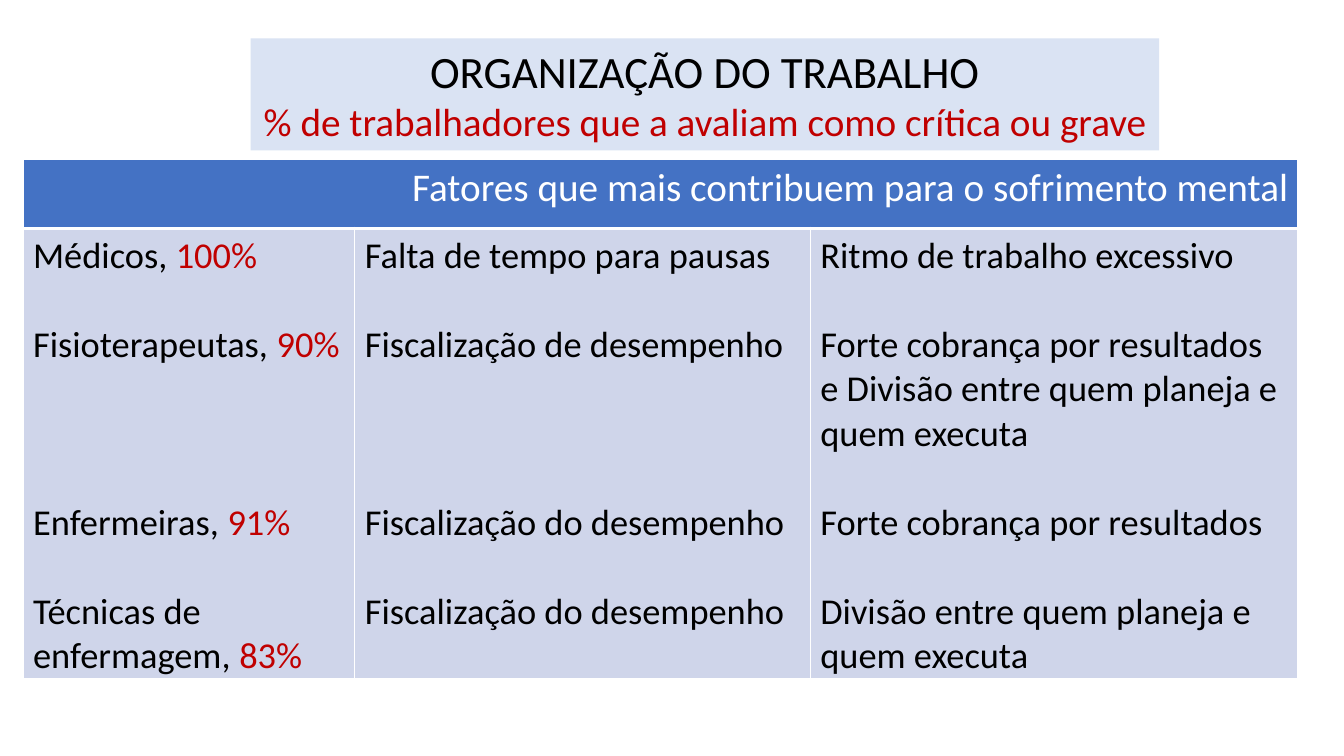
from dataclasses import dataclass

from lxml.etree import SubElement
from pptx import Presentation
from pptx.dml.color import RGBColor
from pptx.enum.shapes import MSO_SHAPE
from pptx.enum.text import PP_ALIGN
from pptx.oxml.ns import qn
from pptx.util import Cm, Pt


@dataclass(frozen=True)
class Theme:
    font: str = "Calibri"
    title_size: int = 32
    subtitle_size: int = 28
    body_size: int = 26
    line_height: float = 31.74  # one line of body text, in points
    black: RGBColor = RGBColor(0x00, 0x00, 0x00)
    white: RGBColor = RGBColor(0xFF, 0xFF, 0xFF)
    red: RGBColor = RGBColor(0xC0, 0x00, 0x00)
    title_fill: RGBColor = RGBColor(0xDA, 0xE3, 0xF3)
    header_fill: RGBColor = RGBColor(0x44, 0x72, 0xC4)
    body_fill: RGBColor = RGBColor(0xCF, 0xD5, 0xEA)


# Each entry: text, percentage in red, blank lines above
COLUMNS = [
    [("Médicos, ", "100%", 0), ("Fisioterapeutas, ", "90%", 1),
     ("Enfermeiras, ", "91%", 3), ("Técnicas de enfermagem, ", "83%", 1)],
    [("Falta de tempo para pausas", "", 0), ("Fiscalização de desempenho", "", 1),
     ("Fiscalização do desempenho", "", 3), ("Fiscalização do desempenho", "", 1)],
    [("Ritmo de trabalho excessivo", "", 0),
     ("Forte cobrança por resultados e Divisão entre quem planeja e quem executa", "", 1),
     ("Forte cobrança por resultados", "", 1),
     ("Divisão entre quem planeja e quem executa", "", 1)],
]


class SlideBuilder:
    def __init__(self, slide, theme):
        self.slide = slide
        self.theme = theme

    def paragraph(self, frame, index, parts, size, align=PP_ALIGN.LEFT):
        """Write (text, colour) parts into the paragraph at index."""
        paragraph = frame.paragraphs[0] if index == 0 else frame.add_paragraph()
        paragraph.alignment = align
        paragraph.font.name = self.theme.font
        paragraph.font.size = Pt(size)
        for text, color in parts:
            run = paragraph.add_run()
            run.text = text
            run.font.color.rgb = color
        return paragraph

    def title_box(self, left, top, width, height, lines):
        shape = self.slide.shapes.add_shape(
            MSO_SHAPE.RECTANGLE, Cm(left), Cm(top), Cm(width), Cm(height))
        shape.shadow.inherit = False
        shape.fill.solid()
        shape.fill.fore_color.rgb = self.theme.title_fill
        shape.line.fill.background()
        shape.text_frame.word_wrap = True
        for index, (text, size, color) in enumerate(lines):
            self.paragraph(shape.text_frame, index, [(text, color)], size, PP_ALIGN.CENTER)

    def style_cell(self, cell, fill, top_border, bottom_border):
        properties = cell._tc.get_or_add_tcPr()
        widths = {"a:lnL": 1, "a:lnR": 1, "a:lnT": top_border, "a:lnB": bottom_border}
        for tag, width in widths.items():
            line = SubElement(properties, qn(tag), w=str(Pt(width)))
            solid = SubElement(line, qn("a:solidFill"))
            SubElement(solid, qn("a:srgbClr"), val=str(self.theme.white))
        cell.fill.solid()
        cell.fill.fore_color.rgb = fill

    def factor_table(self, left, top, widths, heights, heading, columns):
        theme = self.theme
        table = self.slide.shapes.add_table(
            len(heights), len(widths), Cm(left), Cm(top),
            Cm(sum(widths)), Cm(sum(heights))).table
        for row, height in zip(table.rows, heights):
            row.height = Cm(height)

        # Columns of the body, with the header cells above
        for index, (width, entries) in enumerate(zip(widths, columns)):
            table.columns[index].width = Cm(width)
            self.style_cell(table.cell(0, index), theme.header_fill, 1, 3)
            cell = table.cell(1, index)
            self.style_cell(cell, theme.body_fill, 3, 1)
            cell.margin_bottom = 0
            for position, (text, percentage, blank_lines) in enumerate(entries):
                parts = [(text, theme.black)]
                if percentage:
                    parts.append((percentage, theme.red))
                paragraph = self.paragraph(cell.text_frame, position, parts, theme.body_size)
                paragraph.space_before = Pt(blank_lines * theme.line_height)

        # Heading across all columns
        header = table.cell(0, 0)
        header.merge(table.cell(0, len(widths) - 1))
        self.paragraph(header.text_frame, 0, [(heading, theme.white)],
                       theme.subtitle_size, PP_ALIGN.RIGHT)


def main():
    presentation = Presentation()
    presentation.slide_width = Cm(33.87)
    presentation.slide_height = Cm(19.05)
    theme = Theme()
    builder = SlideBuilder(
        presentation.slides.add_slide(presentation.slide_layouts[6]), theme)

    # Table of factors
    builder.factor_table(0.58, 4.01, [8.36, 11.48, 12.29], [1.75, 11.28],
                         "Fatores que mais contribuem para o sofrimento mental", COLUMNS)

    # Title
    builder.title_box(6.32, 0.97, 22.89, 2.82, [
        ("ORGANIZAÇÃO DO TRABALHO", theme.title_size, theme.black),
        ("% de trabalhadores que a avaliam como crítica ou grave",
         theme.subtitle_size, theme.red),
    ])

    presentation.save("out.pptx")


if __name__ == "__main__":
    main()
